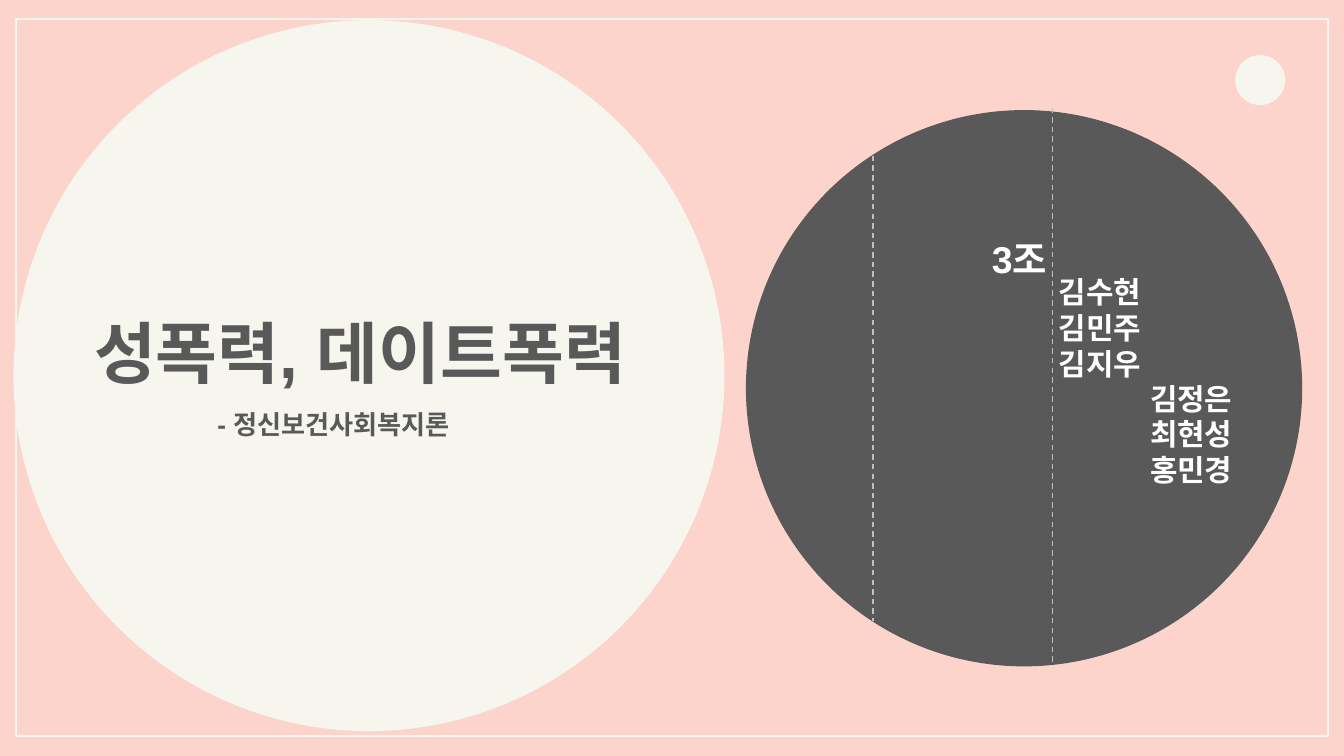
"""Build the opening slide: title circle, team circle and member names."""
from dataclasses import dataclass

import pptx
import pptx.dml.color
import pptx.enum.dml
import pptx.enum.shapes
import pptx.enum.text
import pptx.oxml
import pptx.oxml.ns
import pptx.util

Pt = pptx.util.Pt
RGBColor = pptx.dml.color.RGBColor
PINK = RGBColor(0xFC, 0xD4, 0xCC)
CREAM = RGBColor(0xF6, 0xF5, 0xEE)
CHARCOAL = RGBColor(0x59, 0x59, 0x59)
SILVER = RGBColor(0xBF, 0xBF, 0xBF)
WHITE = RGBColor(0xFF, 0xFF, 0xFF)
LATIN_FONT = "Arial"
KOREAN_FONT = "Noto Sans CJK KR"


@dataclass
class Disc:
    left: float
    top: float
    diameter: float
    color: RGBColor


@dataclass
class Divider:
    x: float
    top: float
    bottom: float


@dataclass
class Label:
    left: float
    top: float
    width: float
    height: float
    size: float
    lines: tuple[str, ...]


DISCS = [
    Disc(399.6, 59, 298, CHARCOAL),
    Disc(7.2, 10.8, 380.9, CREAM),
    Disc(661.7, 29.5, 26.8, CREAM),
]
DIVIDERS = [Divider(563.8, 57.6, 355.7), Divider(467.7, 83.5, 332.6)]
LABELS = [
    Label(560.2, 143.3, 102.2, 65.5, 16, ("김수현", "김민주", "김지우")),
    Label(609.1, 200.2, 108, 65.5, 16, ("김정은", "최현성", "홍민경")),
    Label(524.2, 123.1, 46, 31.7, 20, ("3조",)),
]


def add_run(paragraph, text: str, size: float, color: RGBColor) -> None:
    """Append one bold run with Latin and Korean fonts."""
    run = paragraph.add_run()
    run.text = text
    run.font.size = Pt(size)
    run.font.bold = True
    run.font.name = LATIN_FONT
    run.font.color.rgb = color
    korean = pptx.oxml.parse_xml(
        f'<a:ea {pptx.oxml.ns.nsdecls("a")} typeface="{KOREAN_FONT}"/>'
    )
    run.font._element.find(pptx.oxml.ns.qn("a:latin")).addnext(korean)


def add_frame(slide) -> None:
    """Draw the thin border around the slide."""
    frame = slide.shapes.add_shape(
        pptx.enum.shapes.MSO_SHAPE.RECTANGLE, Pt(8.6), Pt(10), Pt(702.7), Pt(384.5)
    )
    frame.shadow.inherit = False
    frame.fill.background()
    frame.line.color.rgb = CREAM
    frame.line.width = Pt(1)


def add_disc(slide, disc: Disc) -> None:
    """Draw a borderless filled circle."""
    circle = slide.shapes.add_shape(
        pptx.enum.shapes.MSO_SHAPE.OVAL,
        Pt(disc.left), Pt(disc.top), Pt(disc.diameter), Pt(disc.diameter),
    )
    circle.shadow.inherit = False
    circle.fill.solid()
    circle.fill.fore_color.rgb = disc.color
    circle.line.fill.background()


def add_divider(slide, divider: Divider) -> None:
    """Draw a dashed vertical line."""
    dashes = slide.shapes.add_connector(
        pptx.enum.shapes.MSO_CONNECTOR.STRAIGHT,
        Pt(divider.x), Pt(divider.top), Pt(divider.x), Pt(divider.bottom),
    )
    dashes.line.color.rgb = SILVER
    dashes.line.width = Pt(0.75)
    dashes.line.dash_style = pptx.enum.dml.MSO_LINE.DASH
    dashes._element.spPr.append(
        pptx.oxml.parse_xml(f'<a:effectLst {pptx.oxml.ns.nsdecls("a")}/>')
    )


def add_label(slide, label: Label) -> None:
    """Write white lines of text on the dark circle."""
    box = slide.shapes.add_textbox(
        Pt(label.left), Pt(label.top), Pt(label.width), Pt(label.height)
    )
    frame = box.text_frame
    frame.word_wrap = True
    frame.auto_size = pptx.enum.text.MSO_AUTO_SIZE.SHAPE_TO_FIT_TEXT
    for index, line in enumerate(label.lines):
        paragraph = frame.add_paragraph() if index else frame.paragraphs[0]
        add_run(paragraph, line, label.size, WHITE)


def fill_title(slide) -> None:
    """Place the title with its indented course name in front of the circles."""
    title = slide.shapes.title
    title.left, title.top, title.width, title.height = (
        Pt(43.2), Pt(141.8), Pt(434.2), Pt(95.8)
    )
    slide.shapes._spTree.append(title._element)
    frame = title.text_frame
    frame.word_wrap = True
    frame.auto_size = pptx.enum.text.MSO_AUTO_SIZE.SHAPE_TO_FIT_TEXT
    frame.vertical_anchor = pptx.enum.text.MSO_ANCHOR.TOP
    topic, course = frame.paragraphs[0], frame.add_paragraph()
    for paragraph in (topic, course):
        paragraph.alignment = pptx.enum.text.PP_ALIGN.LEFT
        paragraph.line_spacing = 1.5
    add_run(topic, "성폭력, 데이트폭력", 36, CHARCOAL)
    add_run(course, "- 정신보건사회복지론", 14, CHARCOAL)
    course._p.get_or_add_pPr().set("marL", str(Pt(66)))


def main() -> None:
    """Assemble and save the slide."""
    deck = pptx.Presentation()
    deck.slide_width, deck.slide_height = Pt(720), Pt(405)
    slide = deck.slides.add_slide(deck.slide_layouts[5])
    slide.background.fill.solid()
    slide.background.fill.fore_color.rgb = PINK
    add_frame(slide)
    for disc in DISCS:
        add_disc(slide, disc)
    for divider in DIVIDERS:
        add_divider(slide, divider)
    for label in LABELS:
        add_label(slide, label)
    fill_title(slide)
    deck.save("out.pptx")


if __name__ == "__main__":
    main()
